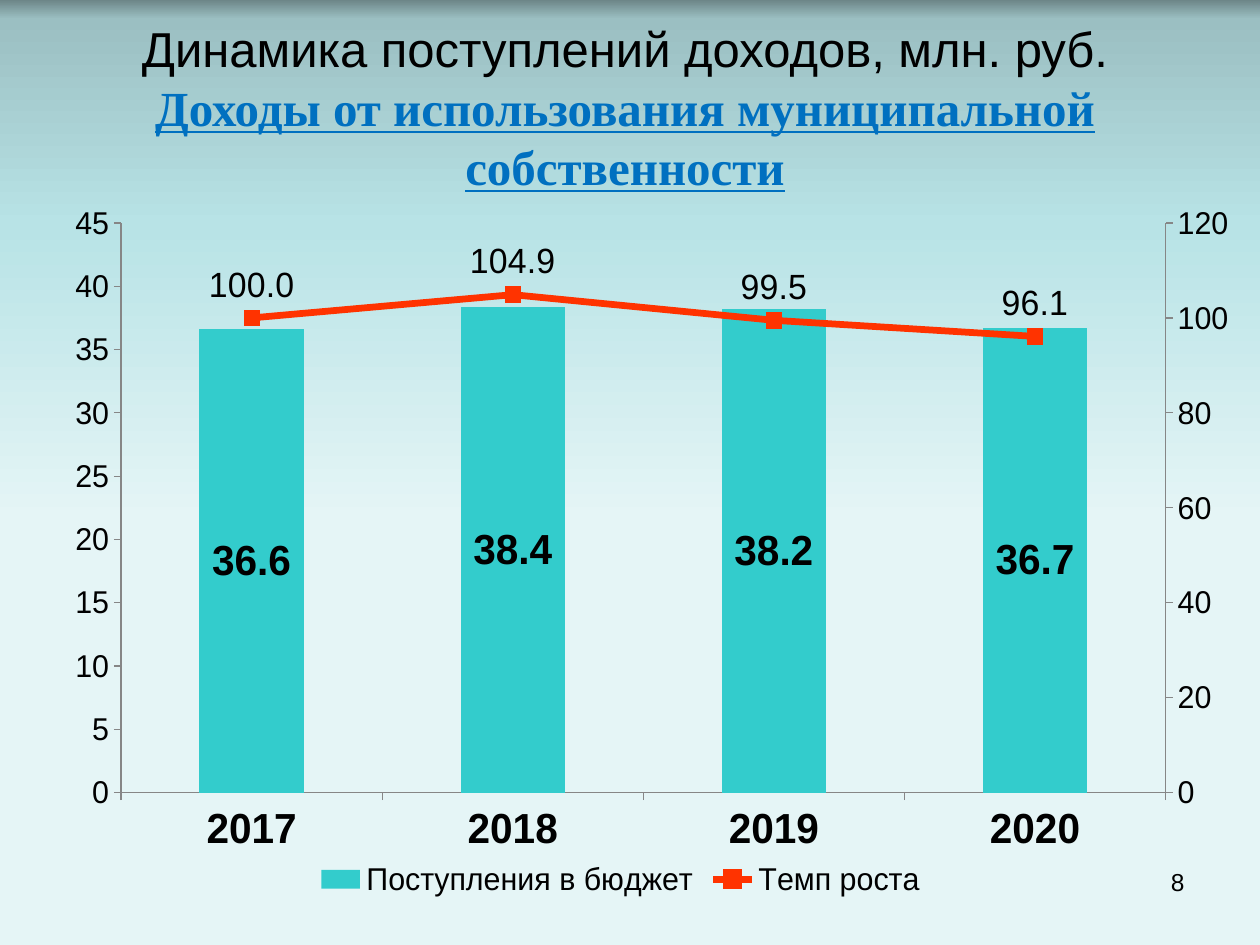
from copy import deepcopy
from dataclasses import dataclass

from lxml import etree
from pptx import Presentation
from pptx.chart.data import CategoryChartData
from pptx.dml.color import RGBColor
from pptx.enum.chart import (XL_CHART_TYPE, XL_LABEL_POSITION, XL_LEGEND_POSITION,
                             XL_MARKER_STYLE, XL_TICK_MARK)
from pptx.enum.text import MSO_ANCHOR, PP_ALIGN
from pptx.oxml import parse_xml
from pptx.oxml.ns import nsdecls, qn
from pptx.util import Inches, Pt


@dataclass(frozen=True)
class Theme:
    text: str = "000000"
    heading: str = "0070C0"
    bar: str = "33CCCC"
    line: str = "FF3300"
    axis: str = "868686"
    gradient: tuple = ((0, "6D8688"), (2, "9BBFC2"), (24, "B8E3E6"), (55, "E5F5F6"))
    sans: str = "Arial"
    serif: str = "Times New Roman"
    title_size: int = 28
    chart_size: int = 18
    strong_size: int = 24
    rate_size: int = 20
    number_size: int = 14


def set_font(font, size, color, name, bold=False, underline=False):
    font.size, font.name = Pt(size), name
    font.bold, font.underline = bold, underline
    font.color.rgb = RGBColor.from_string(color)


class SlideBuilder:
    def __init__(self, slide, theme):
        self.slide = slide
        self.theme = theme

    def background(self):
        fill = self.slide.background.fill
        fill.gradient()
        fill.gradient_angle = 270
        stops = fill._fill._gradFill.find(qn("a:gsLst"))
        for stop in list(stops):
            stops.remove(stop)
        for position, color in self.theme.gradient:
            stop = etree.SubElement(stops, qn("a:gs"), pos=str(position * 1000))
            etree.SubElement(stop, qn("a:srgbClr"), val=color)

    def text(self, box, lines, align, anchor=MSO_ANCHOR.TOP):
        """Each line is (text, size, color, font name, bold, underline)."""
        shape = self.slide.shapes.add_textbox(*map(Inches, box))
        frame = shape.text_frame
        frame.word_wrap = True
        frame.vertical_anchor = anchor
        for index, (text, *style) in enumerate(lines):
            paragraph = frame.add_paragraph() if index else frame.paragraphs[0]
            paragraph.text = text
            paragraph.alignment = align
            set_font(paragraph.font, *style)

    def combined_chart(self, box, layout, categories, bars, rates):
        theme = self.theme
        data = CategoryChartData()
        data.categories = categories
        for name, values in (bars, rates):
            data.add_series(name, values)
        chart = self.slide.shapes.add_chart(
            XL_CHART_TYPE.COLUMN_STACKED, *map(Inches, box), data).chart
        set_font(chart.font, theme.chart_size, theme.text, theme.sans)
        chart.has_title = False
        chart.has_legend = True
        chart.legend.position = XL_LEGEND_POSITION.BOTTOM
        chart.legend.include_in_layout = False

        # Axes
        for axis in (chart.category_axis, chart.value_axis):
            axis.has_major_gridlines = False
            axis.major_tick_mark = XL_TICK_MARK.OUTSIDE
            axis.minor_tick_mark = XL_TICK_MARK.NONE
            axis.format.line.color.rgb = RGBColor.from_string(theme.axis)
        chart.value_axis.minimum_scale = 0
        set_font(chart.category_axis.tick_labels.font, theme.strong_size,
                 theme.text, theme.sans, True)

        self.move_to_right_axis(chart)
        self.place_plot(chart, layout)

        # Columns
        columns, lines = chart.plots
        columns.gap_width, columns.overlap = 150, 100
        columns.vary_by_categories = False
        column_fill = columns.series[0].format.fill
        column_fill.solid()
        column_fill.fore_color.rgb = RGBColor.from_string(theme.bar)
        self.labels(columns.series[0], theme.strong_size, True)

        # Growth line
        series = lines.series[0]
        line_color = RGBColor.from_string(theme.line)
        series.smooth = False
        series.format.line.width = Pt(4)
        series.format.line.color.rgb = line_color
        series.marker.style = XL_MARKER_STYLE.SQUARE
        series.marker.size = 9
        series.marker.format.fill.solid()
        series.marker.format.fill.fore_color.rgb = line_color
        series.marker.format.line.color.rgb = line_color
        self.labels(series, theme.rate_size, False, XL_LABEL_POSITION.ABOVE)

    def labels(self, series, size, bold, position=None):
        labels = series.data_labels
        labels.show_value = True
        labels.number_format, labels.number_format_is_linked = "0.0", False
        set_font(labels.font, size, self.theme.text, self.theme.sans, bold)
        if position is not None:
            labels.position = position

    def move_to_right_axis(self, chart):
        """Turn the second column series into a line on its own value axis."""
        bar_chart = chart.plots[0]._element
        series = bar_chart.findall(qn("c:ser"))[1]
        negative = series.find(qn("c:invertIfNegative"))
        if negative is not None:
            series.remove(negative)
        line_chart = parse_xml(
            f'<c:lineChart {nsdecls("c")}><c:grouping val="standard"/>'
            '<c:varyColors val="0"/><c:marker val="1"/>'
            '<c:axId val="501"/><c:axId val="502"/></c:lineChart>')
        line_chart.insert(2, series)
        bar_chart.addnext(line_chart)

        category_axis = deepcopy(chart.category_axis._element)
        value_axis = deepcopy(chart.value_axis._element)
        for axis, own, other in ((category_axis, "501", "502"), (value_axis, "502", "501")):
            axis.find(qn("c:axId")).set("val", own)
            axis.find(qn("c:crossAx")).set("val", other)
        category_axis.find(qn("c:delete")).set("val", "1")
        value_axis.find(qn("c:axPos")).set("val", "r")
        value_axis.find(qn("c:crosses")).set("val", "max")
        scaling = value_axis.find(qn("c:scaling"))
        scaling.find(qn("c:min")).addprevious(parse_xml(f'<c:max {nsdecls("c")} val="120"/>'))
        chart.value_axis._element.addnext(value_axis)
        value_axis.addnext(category_axis)

    def place_plot(self, chart, layout):
        plot_area = chart.plots[0]._element.getparent()
        for old in plot_area.findall(qn("c:layout")):
            plot_area.remove(old)
        sizes = "".join(f'<c:{key} val="{value}"/>' for key, value in zip("xywh", layout))
        plot_area.insert(0, parse_xml(
            f'<c:layout {nsdecls("c")}><c:manualLayout><c:layoutTarget val="inner"/>'
            f'<c:xMode val="edge"/><c:yMode val="edge"/>{sizes}'
            '</c:manualLayout></c:layout>'))


def main():
    presentation = Presentation()
    presentation.slide_width, presentation.slide_height = Inches(10), Inches(7.5)
    slide = presentation.slides.add_slide(presentation.slide_layouts[6])
    theme = Theme()
    builder = SlideBuilder(slide, theme)
    builder.background()

    # Title
    builder.text((0.17, 0.1, 9.58, 1.5), [
        ("Динамика поступлений доходов, млн. руб.",
         theme.title_size, theme.text, theme.sans),
        ("Доходы от использования муниципальной собственности",
         theme.title_size, theme.heading, theme.serif, True, True),
    ], PP_ALIGN.CENTER, MSO_ANCHOR.MIDDLE)

    # Revenue columns with growth line
    builder.combined_chart(
        (0.42, 0.42, 9.33, 6.75), (0.06, 0.2, 0.92, 0.67),
        ("2017", "2018", "2019", "2020"),
        ("Поступления в бюджет", (36.6, 38.4, 38.2, 36.7)),
        ("Темп роста", (100.0, 104.9, 99.5, 96.1)))

    # Slide number
    builder.text((7.17, 6.83, 2.33, 0.52),
                 [("8", theme.number_size, theme.text, theme.sans)], PP_ALIGN.RIGHT)
    presentation.save("out.pptx")


if __name__ == "__main__":
    main()
